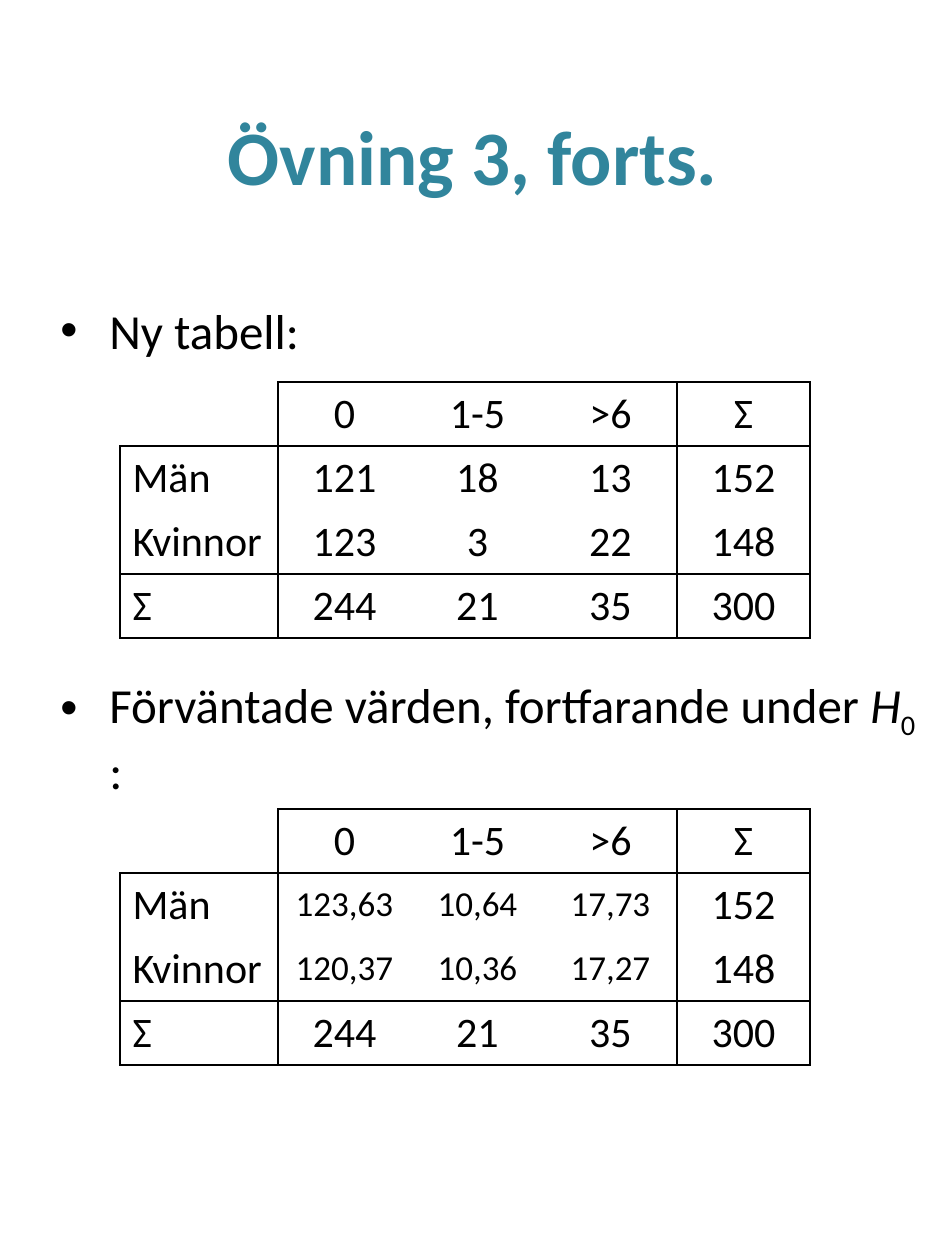
from dataclasses import dataclass

from lxml import etree
from pptx import Presentation
from pptx import util as u
from pptx.dml.color import RGBColor
from pptx.enum import text
from pptx.oxml import ns

EMU_PER_PX = 914400 / 126
COLORS = {"title": "31859C", "ink": "000000"}
FONT = "Calibri"
NO_STYLE = "{2D5ABB26-0587-4C30-8999-92F81FD0307C}"


@dataclass
class CountTable:
    top: int
    men: list[str]
    women: list[str]
    count_size: int


LEFT, ROW_HEIGHT = 120, 64
COLUMN_WIDTHS = [158] + [133] * 4
HEADINGS = ["", "0", "1-5", ">6", "Σ"]
TOTALS = ["Σ", "244", "21", "35", "300"]
TABLES = [
    CountTable(382, ["121", "18", "13"], ["123", "3", "22"], 24),
    CountTable(809, ["123,63", "10,64", "17,73"], ["120,37", "10,36", "17,27"], 20),
]


def px(length: int) -> int:
    return round(length * EMU_PER_PX)


def place(shape, left: int, top: int, width: int, height: int) -> None:
    values = {"left": left, "top": top, "width": width, "height": height}
    for name, value in values.items():
        setattr(shape, name, px(value))


def add_span(para, words: str, size: int, color: str = "ink", **style):
    span = para.add_run()
    span.text = words
    for name, value in {"name": FONT, "size": u.Pt(size), **style}.items():
        setattr(span.font, name, value)
    span.font.color.rgb = RGBColor.from_string(COLORS[color])
    return span


def add_bullet(para, space_before: float) -> None:
    para.space_before = u.Pt(space_before)
    properties = para._p.get_or_add_pPr()
    properties.set("marL", str(px(49)))
    properties.set("indent", str(-px(49)))
    etree.SubElement(properties, ns.qn("a:buFont"), typeface="Arial")
    etree.SubElement(properties, ns.qn("a:buChar"), char="•")


def set_borders(cell, row: int, column: int) -> None:
    """Rule the margins off from the counts, leaving the corner cell open."""
    ruled = {
        "lnL": column in (1, 4) or (column == 0 and row > 0),
        "lnR": column in (0, 3, 4),
        "lnT": row in (1, 3) or (row == 0 and column > 0),
        "lnB": row in (0, 2, 3),
    }
    properties = cell._tc.get_or_add_tcPr()
    for side, visible in ruled.items():
        width = u.Pt(1) if visible else 0
        line = etree.SubElement(properties, ns.qn(f"a:{side}"), w=str(width))
        if visible:
            fill = etree.SubElement(line, ns.qn("a:solidFill"))
            etree.SubElement(fill, ns.qn("a:srgbClr"), val=COLORS["ink"])
        else:
            etree.SubElement(line, ns.qn("a:noFill"))


def add_count_table(page, spec: CountTable) -> None:
    rows = [
        HEADINGS,
        ["Män", *spec.men, "152"],
        ["Kvinnor", *spec.women, "148"],
        TOTALS,
    ]
    frame = page.shapes.add_table(
        len(rows), len(HEADINGS), px(LEFT), px(spec.top),
        px(sum(COLUMN_WIDTHS)), px(ROW_HEIGHT * len(rows)))
    table = frame.table
    table.first_row = table.horz_banding = False
    table._tbl.tblPr.find(ns.qn("a:tableStyleId")).text = NO_STYLE
    for column, width in zip(table.columns, COLUMN_WIDTHS):
        column.width = px(width)
    for r, words in enumerate(rows):
        table.rows[r].height = px(ROW_HEIGHT)
        for c, word in enumerate(words):
            cell = table.cell(r, c)
            set_borders(cell, r, c)
            cell.fill.background()
            cell.vertical_anchor = text.MSO_ANCHOR.MIDDLE
            para = cell.text_frame.paragraphs[0]
            para.alignment = text.PP_ALIGN.CENTER if c else text.PP_ALIGN.LEFT
            is_count = r in (1, 2) and c in (1, 2, 3)
            if word:
                add_span(para, word, spec.count_size if is_count else 24)


def main() -> None:
    deck = Presentation()
    deck.slide_width, deck.slide_height = px(945), px(1260)
    page = deck.slides.add_slide(deck.slide_layouts[5])

    # Title
    title = page.shapes.title
    place(title, 48, 50, 850, 210)
    title.text_frame.vertical_anchor = text.MSO_ANCHOR.MIDDLE
    para = title.text_frame.paragraphs[0]
    para.alignment = text.PP_ALIGN.CENTER
    add_span(para, "Övning 3, forts.", 44, "title", bold=True)

    # Bullets, spaced to leave room for the first table
    box = page.shapes.add_textbox(0, 0, 0, 0)
    place(box, 48, 294, 882, 902)
    box.text_frame.word_wrap = True
    para = box.text_frame.paragraphs[0]
    add_bullet(para, 7.6)
    add_span(para, "Ny tabell:", 28)
    para = box.text_frame.add_paragraph()
    add_bullet(para, 180)
    add_span(para, "Förväntade värden, fortfarande under ", 28)
    add_span(para, "H", 28, italic=True)
    subscript = add_span(para, "0 ", 28)
    subscript.font._element.set("baseline", "-25000")
    add_span(para, ":", 28)

    # Observed and expected counts
    for spec in TABLES:
        add_count_table(page, spec)

    deck.save("out.pptx")


if __name__ == "__main__":
    main()
